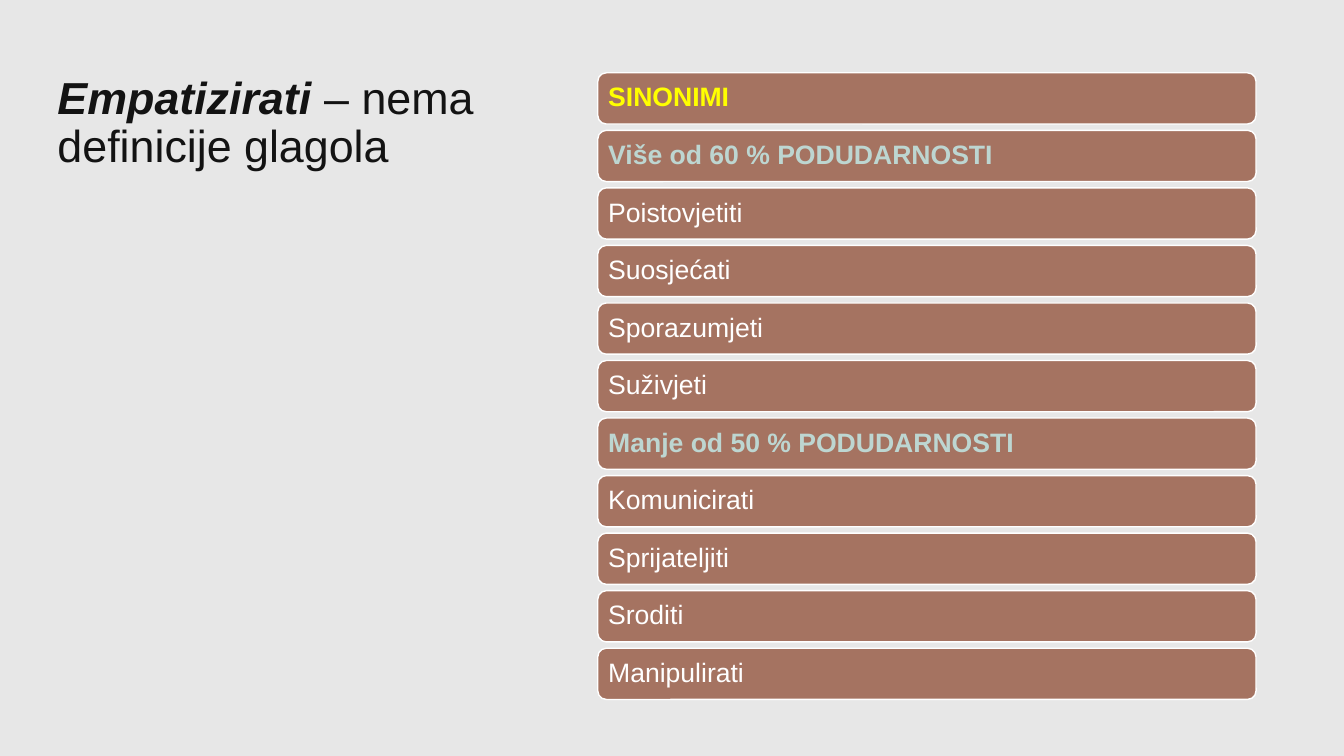
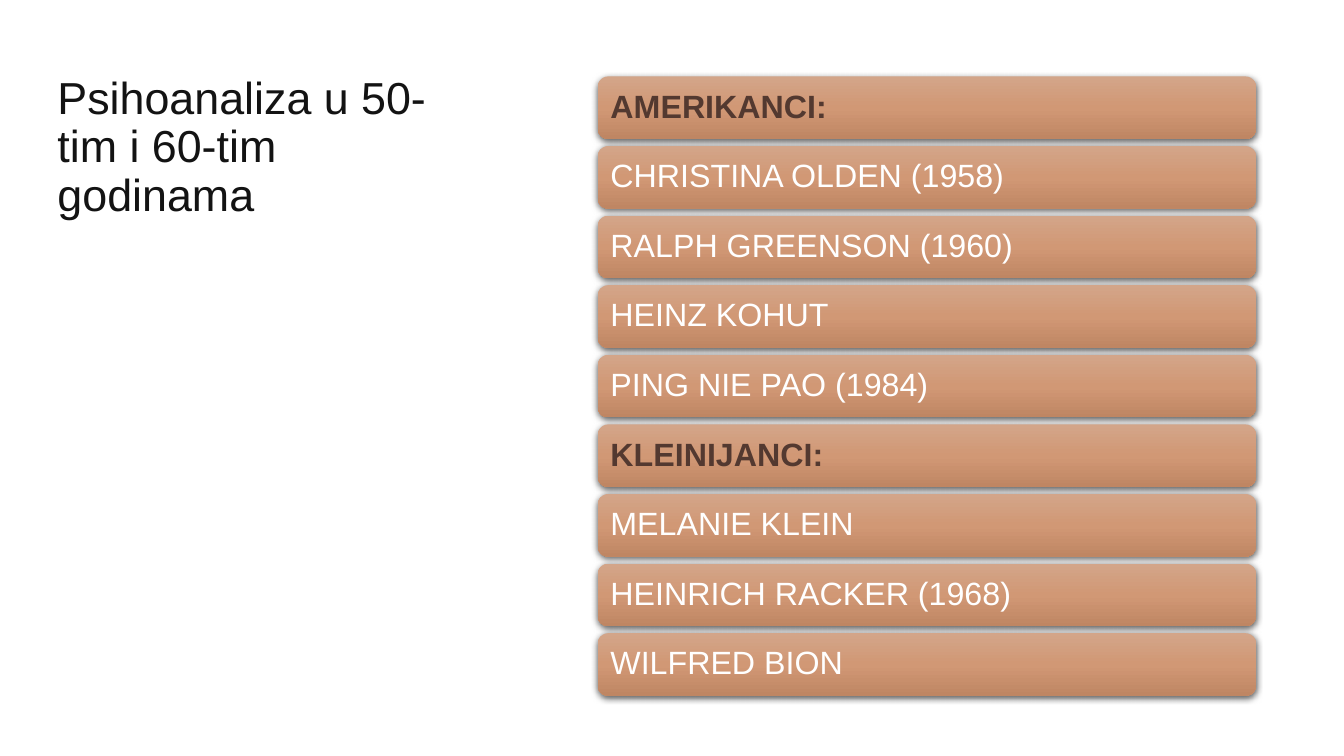
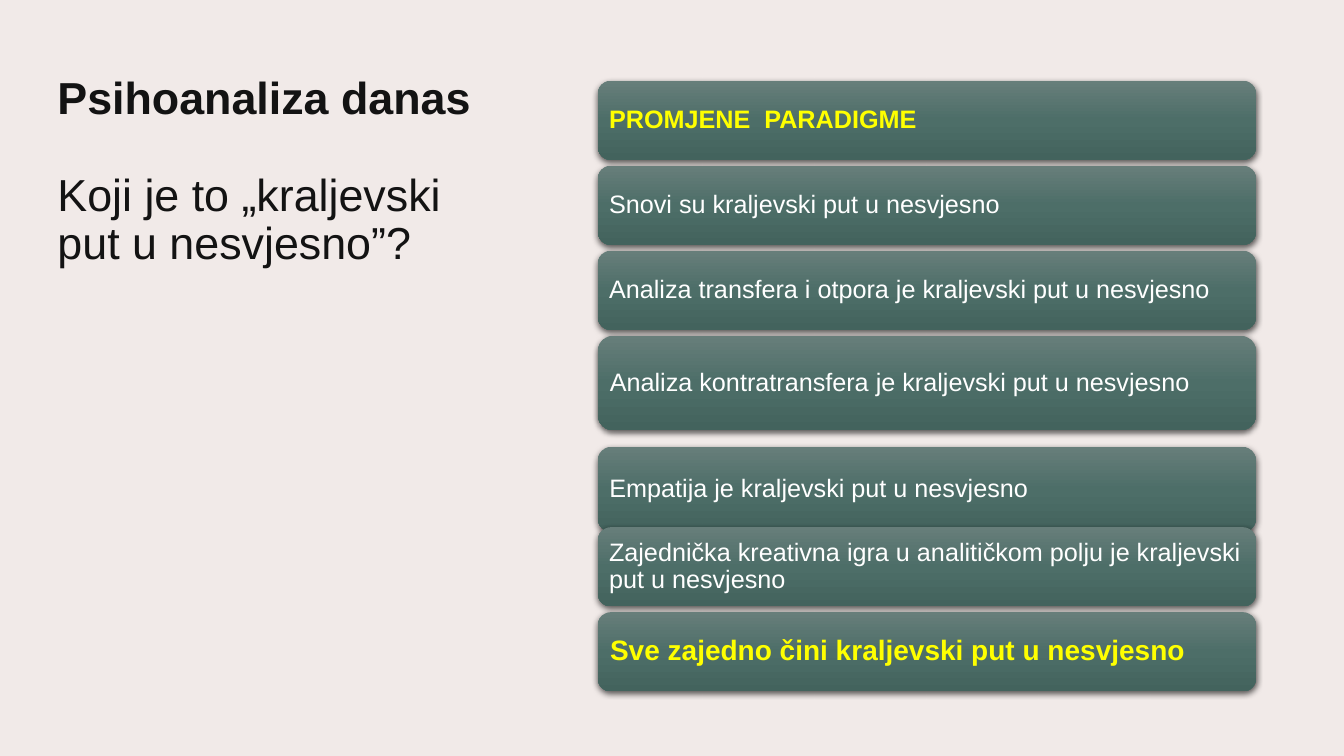
from copy import deepcopy
from dataclasses import dataclass

from lxml import etree
from pptx import Presentation
from pptx.dml import color
from pptx.enum import shapes, text
from pptx.oxml import ns
from pptx.util import Pt

RGB = color.RGBColor


@dataclass(frozen=True)
class Theme:
    font: str = "Arial"
    title_size: float = 32
    line_spacing: float = 0.9
    ink: str = "131313"
    white: str = "FFFFFF"
    yellow: str = "FFFF00"
    mint: str = "BDD6D1"
    brown: str = "533930"
    gray: str = "E7E7E7"
    blush: str = "F1EAE8"
    clay: tuple = ("A57361",)
    copper: tuple = ("D3A589", "D19875", "BF8663")
    pine: tuple = ("677E7A", "4D6E68", "43635D")


@dataclass(frozen=True)
class Box:
    left: float
    top: float
    width: float
    height: float

    def place(self):
        return Pt(self.left), Pt(self.top), Pt(self.width), Pt(self.height)


@dataclass(frozen=True)
class Bar:
    label: str
    accent: str = ""
    size: float = 0
    inset: float = 0
    extra_height: float = 0
    extra_gap: float = 0


@dataclass(frozen=True)
class BarStyle:
    fill: tuple
    size: float
    inset: float
    gap: float


THEME = Theme()
SLIDE_WIDTH, SLIDE_HEIGHT = 960, 540
TITLE_BOX = Box(33.84, 50.4, 317.5, 285)
BARS_LEFT, BARS_WIDTH = 427, 470.2


def set_frame(frame, anchor, inset_x, inset_y):
    frame.word_wrap = True
    frame.auto_size = text.MSO_AUTO_SIZE.NONE
    frame.vertical_anchor = anchor
    frame.margin_left = frame.margin_right = Pt(inset_x)
    frame.margin_top = frame.margin_bottom = Pt(inset_y)


def set_paragraph(paragraph, size, ink):
    paragraph.alignment = text.PP_ALIGN.LEFT
    paragraph.line_spacing = THEME.line_spacing
    font = paragraph.font
    font.name, font.size = THEME.font, Pt(size)
    font.color.rgb = RGB.from_string(ink)


def add_title(slide, box, paragraphs):
    title = slide.shapes.title
    title.left, title.top, title.width, title.height = box.place()
    frame = title.text_frame
    set_frame(frame, text.MSO_ANCHOR.TOP, 7.2, 3.6)
    for index, runs in enumerate(paragraphs):
        paragraph = frame.add_paragraph() if index else frame.paragraphs[0]
        set_paragraph(paragraph, THEME.title_size, THEME.ink)
        paragraph.space_before = Pt(34.5 if index else 0)
        for words, bold, italic in runs:
            run = paragraph.add_run()
            run.text = words
            run.font.bold, run.font.italic = bold, italic


def fill_solid(shape, fill):
    shape.fill.solid()
    shape.fill.fore_color.rgb = RGB.from_string(fill)
    shape.line.color.rgb = RGB.from_string(THEME.white)
    shape.line.width = Pt(1)


def fill_gradient(shape, colours):
    shape.fill.gradient()
    shape.fill.gradient_angle = 270
    stop_list = shape._element.spPr.find(".//" + ns.qn("a:gsLst"))
    stop_list.append(deepcopy(stop_list[-1]))
    for index, (stop, colour) in enumerate(zip(shape.fill.gradient_stops, colours)):
        stop.position = index / (len(colours) - 1)
        stop.color.rgb = RGB.from_string(colour)
    shape.line.fill.background()


def add_soft_shadow(shape):
    effects = shape._element.spPr.find(ns.qn("a:effectLst"))
    shadow = etree.SubElement(
        effects, ns.qn("a:outerShdw"), blurRad=str(Pt(4.5)), dist=str(Pt(1.5)),
        dir="5400000", algn="ctr", rotWithShape="0")
    black = etree.SubElement(shadow, ns.qn("a:srgbClr"), val="000000")
    etree.SubElement(black, ns.qn("a:alpha"), val="63000")


def add_bar(slide, box, bar, style):
    shape = slide.shapes.add_shape(shapes.MSO_SHAPE.ROUNDED_RECTANGLE, *box.place())
    shape.shadow.inherit = False
    if len(style.fill) == 1:
        fill_solid(shape, style.fill[0])
    else:
        fill_gradient(shape, style.fill)
        add_soft_shadow(shape)
    inset = bar.inset or style.inset
    set_frame(shape.text_frame, text.MSO_ANCHOR.MIDDLE, inset, inset)
    paragraph = shape.text_frame.paragraphs[0]
    paragraph.text = bar.label
    set_paragraph(paragraph, bar.size or style.size, bar.accent or THEME.white)
    paragraph.font.bold = bool(bar.accent)


def add_bar_stack(slide, box, bars, style):
    extras = sum(bar.extra_height + bar.extra_gap for bar in bars)
    gaps = style.gap * (len(bars) - 1)
    base_height = (box.height - extras - gaps) / len(bars)
    top = box.top
    for bar in bars:
        height = base_height + bar.extra_height
        add_bar(slide, Box(box.left, top, box.width, height), bar, style)
        top += height + style.gap + bar.extra_gap


def add_list_slide(presentation, background, title, top, height, bars, style):
    slide = presentation.slides.add_slide(presentation.slide_layouts[5])
    slide.background.fill.solid()
    slide.background.fill.fore_color.rgb = RGB.from_string(background)
    add_title(slide, TITLE_BOX, title)
    add_bar_stack(slide, Box(BARS_LEFT, top, BARS_WIDTH, height), bars, style)


def add_synonyms(presentation):
    title = [[("Empatizirati ", True, True), ("– nema definicije glagola", False, False)]]
    bars = [
        Bar("SINONIMI", THEME.yellow),
        Bar("Više od 60 % PODUDARNOSTI", THEME.mint),
        Bar("Poistovjetiti"),
        Bar("Suosjećati"),
        Bar("Sporazumjeti"),
        Bar("Suživjeti"),
        Bar("Manje od 50 % PODUDARNOSTI", THEME.mint),
        Bar("Komunicirati"),
        Bar("Sprijateljiti"),
        Bar("Sroditi"),
        Bar("Manipulirati"),
    ]
    style = BarStyle(THEME.clay, 19, 5.7, 4.5)
    add_list_slide(presentation, THEME.gray, title, 52, 447.6, bars, style)


def add_analysts(presentation):
    title = [[("Psihoanaliza u 50-tim i 60-tim godinama", False, False)]]
    bars = [
        Bar("AMERIKANCI:", THEME.brown),
        Bar("CHRISTINA OLDEN (1958)"),
        Bar("RALPH GREENSON (1960)"),
        Bar("HEINZ KOHUT"),
        Bar("PING NIE PAO (1984)"),
        Bar("KLEINIJANCI:", THEME.brown),
        Bar("MELANIE KLEIN"),
        Bar("HEINRICH RACKER (1968)"),
        Bar("WILFRED BION"),
    ]
    style = BarStyle(THEME.copper, 23, 6.9, 5)
    add_list_slide(presentation, THEME.white, title, 54.6, 442.4, bars, style)


def add_paradigms(presentation):
    title = [
        [("Psihoanaliza danas", True, False)],
        [("Koji je to „kraljevski put u nesvjesno”?", False, False)],
    ]
    bars = [
        Bar("PROMJENE  PARADIGME", THEME.yellow),
        Bar("Snovi su kraljevski put u nesvjesno"),
        Bar("Analiza transfera i otpora je kraljevski put u nesvjesno"),
        Bar("Analiza kontratransfera je kraljevski put u nesvjesno",
            extra_height=11, extra_gap=7.5),
        Bar("Empatija je kraljevski put u nesvjesno", extra_height=4.6, extra_gap=-7.8),
        Bar("Zajednička kreativna igra u analitičkom polju je kraljevski put u nesvjesno"),
        Bar("Sve zajedno čini kraljevski put u nesvjesno", THEME.yellow, size=20, inset=6),
    ]
    style = BarStyle(THEME.pine, 18, 5.3, 4.1)
    add_list_slide(presentation, THEME.blush, title, 57.6, 436.3, bars, style)


def main():
    presentation = Presentation()
    presentation.slide_width = Pt(SLIDE_WIDTH)
    presentation.slide_height = Pt(SLIDE_HEIGHT)
    add_synonyms(presentation)
    add_analysts(presentation)
    add_paradigms(presentation)
    presentation.save("out.pptx")


if __name__ == "__main__":
    main()
